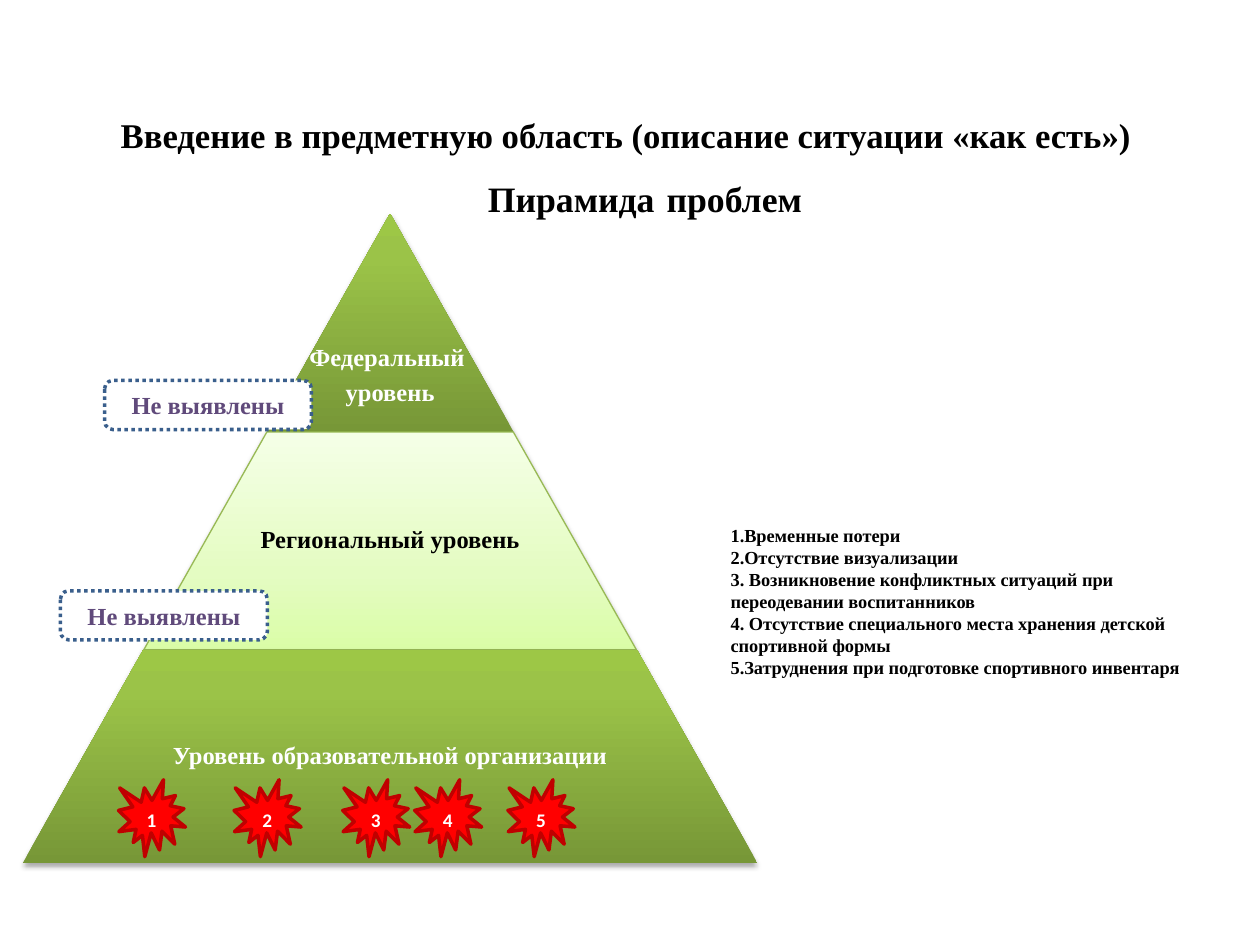
from lxml import etree
from pptx import Presentation
from pptx.dml.color import RGBColor
from pptx.enum.dml import MSO_LINE_DASH_STYLE as Dash
from pptx.enum.shapes import MSO_AUTO_SHAPE_TYPE as ShapeType
from pptx.enum.text import MSO_ANCHOR as Anchor, PP_ALIGN as Align
from pptx.oxml.ns import qn
from pptx.util import Cm, Pt

COLORS = {
    "black": "000000", "white": "FFFFFF", "purple": "604A7B",
    "note_line": "3A5F8C", "seal": "FF0000", "seal_line": "C00000",
    "tier_line": "98B955",
}
DARK_GREEN = [(0, "779737"), (80, "9BC348"), (100, "9DC746")]
LIGHT_GREEN = [(0, "DAFDA7"), (35, "E4FCC2"), (100, "F5FFE7")]
SERIF = "Times New Roman"


def color(name):
    return RGBColor.from_string(COLORS[name])


def box_lengths(box):
    return [Cm(length) for length in box]


def add_run(paragraph, text, size, color_name="black", font=SERIF):
    run = paragraph.add_run()
    run.text = text
    run.font.name, run.font.size, run.font.bold = font, Pt(size), True
    run.font.color.rgb = color(color_name)


def write_lines(frame, lines, size, color_name="black", font=SERIF,
                align=Align.CENTER, anchor=Anchor.MIDDLE):
    frame.word_wrap = True
    frame.vertical_anchor = anchor
    for index, line in enumerate(lines):
        paragraph = frame.add_paragraph() if index else frame.paragraphs[0]
        paragraph.alignment = align
        add_run(paragraph, line, size, color_name, font)


def set_insets(frame, left, top, right, bottom):
    frame.margin_left, frame.margin_top = Cm(left), Cm(top)
    frame.margin_right, frame.margin_bottom = Cm(right), Cm(bottom)


def add_plain_shape(slide, kind, box, fill, line, width):
    shape = slide.shapes.add_shape(kind, *box_lengths(box))
    shape.shadow.inherit = False
    shape.fill.solid()
    shape.fill.fore_color.rgb = color(fill)
    shape.line.color.rgb = color(line)
    shape.line.width = Pt(width)
    return shape


def add_color(parent, value):
    return etree.SubElement(parent, qn("a:srgbClr"), val=value)


def paint_gradient(shape, stops):
    """Vertical gradient whose first stop is at the bottom."""
    shape.fill.gradient()
    shape.fill.gradient_angle = 90
    stop_list = shape.element.spPr.find(qn("a:gradFill")).find(qn("a:gsLst"))
    for old_stop in list(stop_list):
        stop_list.remove(old_stop)
    for position, value in stops:
        stop = etree.SubElement(stop_list, qn("a:gs"), pos=str(position * 1000))
        add_color(stop, value)


def cast_shadow(shape):
    shape.shadow.inherit = False
    effects = shape.element.spPr.find(qn("a:effectLst"))
    shadow = etree.SubElement(
        effects, qn("a:outerShdw"), blurRad=str(Pt(3.1)), dist=str(Pt(1.8)),
        dir="5400000", rotWithShape="0")
    etree.SubElement(add_color(shadow, COLORS["black"]), qn("a:alpha"), val="35000")


def add_heading(slide, title_box, subtitle_box):
    title = slide.shapes.title
    title.left, title.top, title.width, title.height = box_lengths(title_box)
    write_lines(title.text_frame,
                ["Введение в предметную область (описание ситуации «как есть»)"], 19.8)
    set_insets(title.text_frame, 0.25, 0.61, 0.25, 0.13)

    subtitle = slide.shapes.add_textbox(*box_lengths(subtitle_box)).text_frame
    write_lines(subtitle, ["Пирамида"], 20.4, anchor=Anchor.TOP)
    set_insets(subtitle, 0.25, 0.2, 0.25, 0)
    add_run(subtitle.paragraphs[0], " ", 27.2)
    add_run(subtitle.paragraphs[0], "проблем", 20.4)


def add_tier(slide, box, stops, label_width, lines, text_color, outlined=False):
    left, top, width, height = box
    tier = slide.shapes.add_shape(ShapeType.TRAPEZOID, *box_lengths(box))
    tier.adjustments[0] = 0.565
    paint_gradient(tier, stops)
    cast_shadow(tier)
    if outlined:
        tier.line.color.rgb = color("tier_line")
        tier.line.width = Pt(0.75)
    else:
        tier.line.fill.background()

    label_box = (left + (width - label_width) / 2, top, label_width, height)
    label = slide.shapes.add_textbox(*box_lengths(label_box)).text_frame
    # A label of two lines sits low, where the tier is wide enough
    low = len(lines) > 1
    write_lines(label, lines, 14, text_color,
                anchor=Anchor.BOTTOM if low else Anchor.MIDDLE)
    set_insets(label, 0.05, 0.05, 0.05, 0.5 if low else 0.05)
    for paragraph in label.paragraphs:
        paragraph.line_spacing = 0.9
        if low:
            paragraph.space_after = Pt(5)


def add_pyramid(slide, box):
    left, top, width, _ = box
    tiers = [
        (4.98, 4.39, DARK_GREEN, 4.98, ["Федеральный ", "уровень"], "white", False),
        (9.93, 4.39, LIGHT_GREEN, 6.45, ["Региональный уровень"], "black", True),
        (14.81, 4.3, DARK_GREEN, 9.63, ["Уровень образовательной организации"],
         "white", False),
    ]
    for tier_width, height, *style in tiers:
        tier_left = left + (width - tier_width) / 2
        add_tier(slide, (tier_left, top, tier_width, height), *style)
        top += height


def add_note(slide, box):
    note = add_plain_shape(slide, ShapeType.ROUNDED_RECTANGLE, box,
                           "white", "note_line", 2)
    note.line.dash_style = Dash.ROUND_DOT
    write_lines(note.text_frame, ["Не выявлены"], 14, "purple")


def add_problem_list(slide, box):
    problems = [
        "1.Временные потери",
        "2.Отсутствие визуализации",
        "3. Возникновение конфликтных ситуаций при переодевании воспитанников",
        "4. Отсутствие специального места хранения детской спортивной формы",
        "5.Затруднения при подготовке спортивного инвентаря",
    ]
    frame = slide.shapes.add_textbox(*box_lengths(box)).text_frame
    write_lines(frame, problems, 10.5, align=Align.LEFT, anchor=Anchor.TOP)


def add_seals(slide, box):
    left, top, _, height = box
    for number, offset in enumerate([0, 2.33, 4.52, 5.97, 7.85], start=1):
        seal = add_plain_shape(slide, ShapeType.EXPLOSION1,
                               (left + offset, top, 1.35, height),
                               "seal", "seal_line", 2)
        write_lines(seal.text_frame, [str(number)], 11, "white", "Calibri",
                    anchor=Anchor.TOP)
        set_insets(seal.text_frame, 0, 0.13, 0, 0.13)


def main():
    presentation = Presentation()
    presentation.slide_width, presentation.slide_height = Cm(25.4), Cm(19.05)
    slide = presentation.slides.add_slide(presentation.slide_layouts[5])
    add_heading(slide, (1.7, 1.12, 21.82, 2.72), (1.9, 3.12, 22.2, 1.19))
    add_pyramid(slide, (0.46, 4.32, 14.81, 13.08))
    for left, top in [(2.11, 7.67), (1.22, 11.91)]:
        add_note(slide, (left, top, 4.17, 0.99))
    add_problem_list(slide, (14.48, 10.44, 10.01, 3.91))
    add_seals(slide, (2.39, 15.72, 9.2, 1.55))
    presentation.save("out.pptx")


if __name__ == "__main__":
    main()
